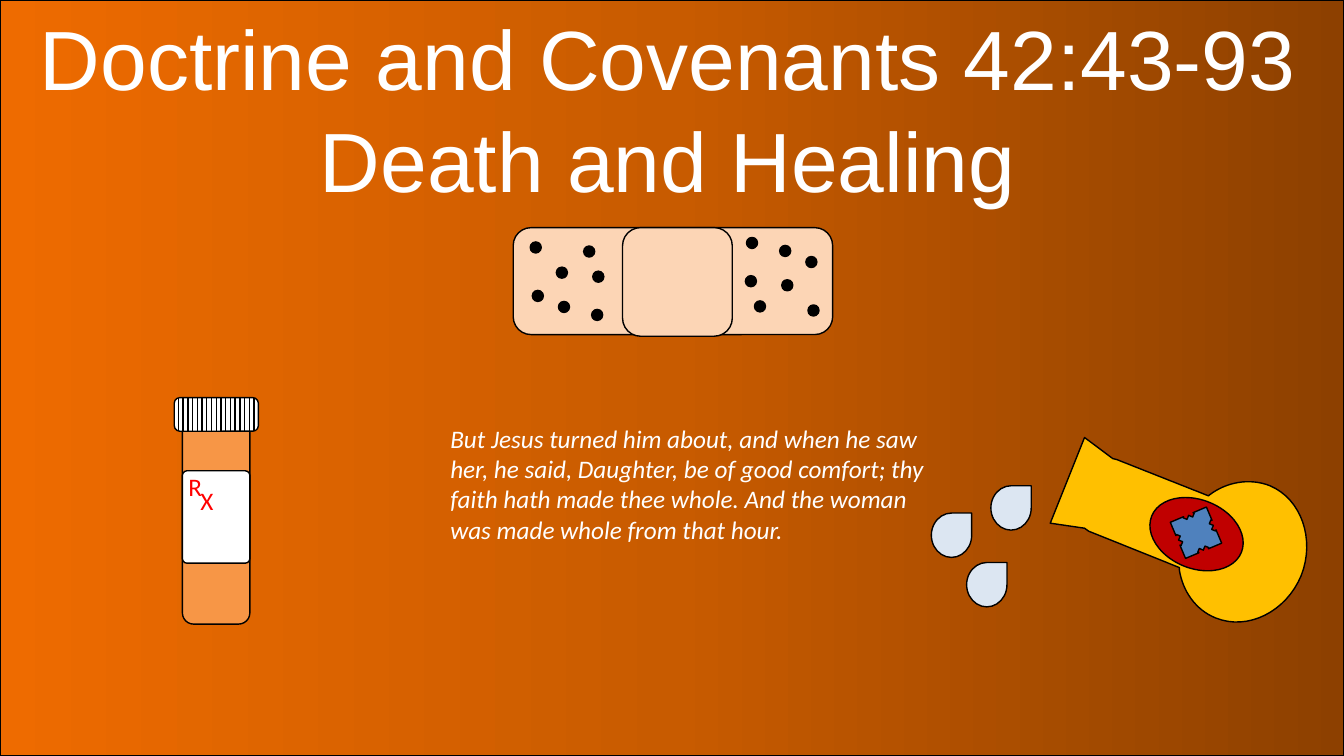
import pptx
import pptx.util
import pptx.dml.color
import pptx.enum.shapes
import pptx.enum.text
import pptx.oxml.ns
import copy
import lxml.etree
from dataclasses import dataclass

Pt = pptx.util.Pt
Kind = pptx.enum.shapes.MSO_SHAPE


@dataclass(frozen=True)
class Theme:
    fade: tuple = ((0, "8D4000"), (0.5, "C85B00"), (1, "EE6B00"))
    ink: str = "000000"
    white: str = "FFFFFF"
    gold: str = "FFC000"
    wound: str = "C00000"
    patch: str = "4F81BD"
    tear: str = "DCE6F2"
    skin: str = "FCD5B5"
    amber: str = "F79646"
    red: str = "FF0000"
    head: str = "Arial"
    body: str = "Calibri"
    big: int = 60
    small: int = 18
    lead: float = 72.8
    edge: int = 1


THEME = Theme()

VERSE = (
    "But Jesus turned him about, and when he saw her, he said, Daughter, "
    "be of good comfort; thy faith hath made thee whole. "
    "And the woman was made whole from that hour."
)
DOTS = [(378.7, 172.8), (416.9, 175.7), (397.4, 190.8), (380.2, 207.4),
        (422.6, 221), (398.9, 215.3), (423.4, 193.7)]
TEARS = [(707.8, 347), (665.3, 366.5), (690.5, 401.8)]
ARM = [(750.2, 373.7), (774.7, 312.5), (794.9, 327.6), (797.8, 328.3),
       (863.3, 354.2), (864, 353.5)]
CURVES = [
    ((876.2, 344.2), (892.8, 341.3), (907.2, 347)),
    ((929.5, 356.4), (939.6, 385.2), (929.5, 411.1)),
    ((918.7, 437), (891.4, 450.7), (868.3, 441.4)),
    ((853.9, 435.6), (844.6, 421.9), (842.4, 406.8)),
]
BASE = [(842.4, 405.4), (777.6, 379.4), (774.7, 377.3)]


def color(code):
    return pptx.dml.color.RGBColor.from_string(code)


def paint(shape, fill):
    shape.shadow.inherit = False
    shape.fill.solid()
    shape.fill.fore_color.rgb = color(fill)
    shape.line.color.rgb = color(THEME.ink)
    shape.line.width = Pt(THEME.edge)


def block(shapes, kind, box, fill, turn=0, adjust=()):
    shape = shapes.add_shape(kind, *map(Pt, box))
    paint(shape, fill)
    shape.rotation = turn
    for index, value in enumerate(adjust):
        shape.adjustments[index] = value
    return shape


def stripe(shapes, x, top, bottom):
    line = shapes.add_connector(pptx.enum.shapes.MSO_CONNECTOR.STRAIGHT,
                                Pt(x), Pt(top), Pt(x), Pt(bottom))
    line.line.color.rgb = color(THEME.ink)
    line.line.width = Pt(THEME.edge)
    lxml.etree.SubElement(line.element.spPr, pptx.oxml.ns.qn("a:effectLst"))


def style(frame, face, size, tint, slant=False):
    for para in frame.paragraphs:
        for run in para.runs:
            run.font.name = face
            run.font.size = Pt(size)
            run.font.color.rgb = color(tint)
            run.font.italic = slant


def label(shapes, box, text, tint, wrap=False, slant=False):
    frame = shapes.add_textbox(*map(Pt, box)).text_frame
    frame.word_wrap = wrap
    frame.text = text
    style(frame, THEME.body, THEME.small, tint, slant)


def bend(start, curve):
    one, two, end = curve
    steps = 16
    for step in range(1, steps + 1):
        t = step / steps
        u = 1 - t
        yield tuple(u**3 * a + 3 * u * u * t * b + 3 * u * t * t * c + t**3 * d
                    for a, b, c, d in zip(start, one, two, end))


def title(slide, lines):
    shape = slide.shapes.title
    shape.left, shape.top, shape.width, shape.height = map(Pt, (-5.8, 0, 965.5, 152.6))
    frame = shape.text_frame
    frame.word_wrap = True
    frame.auto_size = pptx.enum.text.MSO_AUTO_SIZE.NONE
    frame.vertical_anchor = pptx.enum.text.MSO_ANCHOR.TOP
    frame.text = "\n".join(lines)
    for para in frame.paragraphs:
        para.alignment = pptx.enum.text.PP_ALIGN.CENTER
        para.line_spacing = Pt(THEME.lead)
    style(frame, THEME.head, THEME.big, THEME.white)


def backdrop(slide):
    shape = block(slide.shapes, Kind.RECTANGLE, (0, 0, 960, 540), THEME.white)
    shape.fill.gradient()
    shape.fill.gradient_angle = 180
    stops = shape.element.spPr.find(".//" + pptx.oxml.ns.qn("a:gsLst"))
    stops.append(copy.deepcopy(stops[-1]))
    for stop, (place, tint) in zip(shape.fill.gradient_stops, THEME.fade):
        stop.position = place
        stop.color.rgb = color(tint)
    slide.shapes.title.element.addprevious(shape.element)


def limb(slide):
    shapes = slide.shapes.add_group_shape().shapes
    points = list(ARM)
    for curve in CURVES:
        points.extend(bend(points[-1], curve))
    points = [(Pt(x), Pt(y)) for x, y in points + BASE]
    pen = shapes.build_freeform(*points[0], scale=1.0)
    pen.add_line_segments(points[1:], close=True)
    paint(pen.convert_to_shape(), THEME.gold)
    turn = 292.1
    block(shapes, Kind.OVAL, (830.2, 347, 49, 69.1), THEME.wound, turn)
    block(shapes, Kind.QUAD_ARROW_CALLOUT, (834.5, 360.7, 39.6, 39.6),
          THEME.patch, turn, (0.323, 0.185, 0.185, 0.481))


def bandage(slide):
    shapes = slide.shapes.add_group_shape().shapes
    block(shapes, Kind.ROUNDED_RECTANGLE, (366.6, 162.6, 228.2, 76.4), THEME.skin)
    block(shapes, Kind.ROUNDED_RECTANGLE, (444.7, 162.6, 78.4, 77.6), THEME.skin)
    mirror = [(955.8 - x, 390.6 - y) for x, y in DOTS]
    for x, y in DOTS + mirror:
        block(shapes, Kind.OVAL, (x, y, 7.9, 7.9), THEME.ink)


def bottle(slide):
    shapes = slide.shapes.add_group_shape().shapes
    block(shapes, Kind.ROUNDED_RECTANGLE, (130.3, 296, 48.2, 149.8), THEME.amber)
    block(shapes, Kind.ROUNDED_RECTANGLE, (124.5, 284, 60.1, 24), THEME.white)
    for index in range(17):
        stripe(shapes, 127.5 + 3.37 * index, 284, 308)
    block(shapes, Kind.ROUNDED_RECTANGLE, (130.3, 336.3, 48.2, 66), THEME.white,
          adjust=(0.068,))
    label(shapes, (127.4, 333.4, 23, 29), "R", THEME.red)
    label(shapes, (136.1, 343.4, 23, 29), "X", THEME.red)


def main():
    deck = pptx.Presentation()
    deck.slide_width, deck.slide_height = Pt(960), Pt(540)
    slide = deck.slides.add_slide(deck.slide_layouts[5])
    title(slide, ("Doctrine and Covenants 42:43-93", "Death and Healing"))
    backdrop(slide)
    limb(slide)
    for x, y in TEARS:
        block(slide.shapes, Kind.TEAR, (x, y, 28.8, 31.7), THEME.tear)
    bandage(slide)
    bottle(slide)
    label(slide.shapes, (314.6, 298.8, 362.9, 94.3), VERSE, THEME.white, True, True)
    deck.save("out.pptx")


if __name__ == "__main__":
    main()
